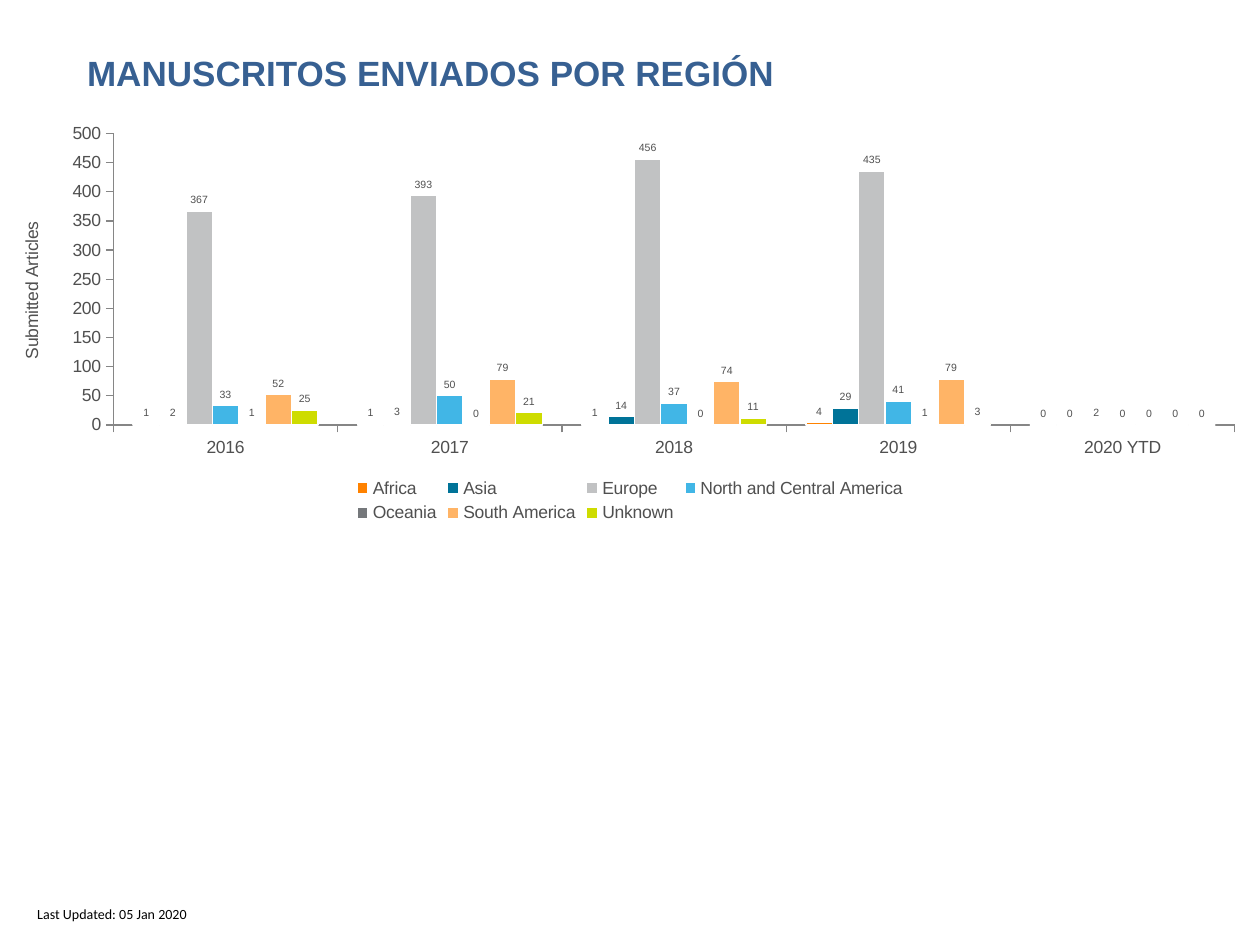
from pptx import Presentation
from pptx.chart.data import CategoryChartData
from pptx.dml.color import RGBColor
from pptx.enum.chart import (XL_CHART_TYPE as ChartType, XL_LABEL_POSITION as LabelPosition,
                             XL_LEGEND_POSITION as LegendPosition, XL_TICK_MARK as TickMark)
from pptx.enum.text import MSO_ANCHOR as Anchor, MSO_AUTO_SIZE as AutoSize, PP_ALIGN as Align
from pptx.oxml import parse_xml
from pptx.oxml.ns import nsdecls
from pptx.util import Cm, Pt

TITLE_BLUE = RGBColor(0x37, 0x60, 0x92)
TEXT_GREY = RGBColor(0x50, 0x50, 0x50)
AXIS_GREY = RGBColor(0x86, 0x86, 0x86)
BLACK = RGBColor(0, 0, 0)
WHITE = RGBColor(0xFF, 0xFF, 0xFF)

YEARS = ["2016", "2017", "2018", "2019", "2020 YTD"]
REGIONS = [
    ("Africa", (1, 1, 1, 4, 0), RGBColor(0xFF, 0x82, 0x00)),
    ("Asia", (2, 3, 14, 29, 0), RGBColor(0x00, 0x73, 0x98)),
    ("Europe", (367, 393, 456, 435, 2), RGBColor(0xC1, 0xC2, 0xC3)),
    ("North and Central America", (33, 50, 37, 41, 0), RGBColor(0x41, 0xB6, 0xE6)),
    ("Oceania", (1, 0, 0, 1, 0), RGBColor(0x75, 0x78, 0x7B)),
    ("South America", (52, 79, 74, 79, 0), RGBColor(0xFF, 0xB4, 0x66)),
    ("Unknown", (25, 21, 11, 3, 0), RGBColor(0xCE, 0xDC, 0x00)),
]
# Plot area as fractions of the chart frame
PLOT_AREA = {"x": 0.09, "y": 0.04, "w": 0.89, "h": 0.71}

TITLE_FONT = {"name": "Arial", "size": Pt(20), "bold": True, "color": TITLE_BLUE}
FOOTER_FONT = {"name": "Calibri", "size": Pt(8), "color": BLACK}
CHART_FONT = {"name": "Arial", "size": Pt(10), "bold": False, "color": TEXT_GREY}
LABEL_FONT = {**CHART_FONT, "size": Pt(6)}


def format_font(font, formats):
    for key, value in formats.items():
        if key == "color":
            font.color.rgb = value
        else:
            setattr(font, key, value)


def write_line(shape, text, formats, wrap):
    frame = shape.text_frame
    settings = {"auto_size": AutoSize.NONE, "word_wrap": wrap, "vertical_anchor": Anchor.TOP}
    for key, value in settings.items():
        setattr(frame, key, value)
    para = frame.paragraphs[0]
    para.alignment = Align.LEFT
    para.space_before = Pt(0)
    span = para.add_run()
    span.text = text
    format_font(span.font, formats)


def place_title(page, box):
    title = page.shapes.title
    for key, value in zip(("left", "top", "width", "height"), box):
        setattr(title, key, value)
    write_line(title, "MANUSCRITOS ENVIADOS POR REGIÓN", TITLE_FONT, True)


def place_footer(page, box):
    footer = page.shapes.add_textbox(*box)
    write_line(footer, "Last Updated: 05 Jan 2020", FOOTER_FONT, False)


def fix_plot_area(chart):
    sizes = "".join(f'<c:{key} val="{value}"/>' for key, value in PLOT_AREA.items())
    layout = parse_xml(
        f'<c:layout {nsdecls("c")}><c:manualLayout><c:layoutTarget val="inner"/>'
        f'<c:xMode val="edge"/><c:yMode val="edge"/>{sizes}</c:manualLayout></c:layout>')
    plot_area = chart._chartSpace.chart.plotArea
    for old in plot_area.findall(layout.tag):
        plot_area.remove(old)
    plot_area.insert(0, layout)


def format_axes(chart):
    for axis in (chart.category_axis, chart.value_axis):
        axis.has_major_gridlines = False
        axis.major_tick_mark = TickMark.OUTSIDE
        axis.minor_tick_mark = TickMark.NONE
        axis.format.line.color.rgb = AXIS_GREY
        axis.format.line.width = Pt(0.75)
        format_font(axis.tick_labels.font, CHART_FONT)
    scale = {"minimum_scale": 0, "maximum_scale": 500, "major_unit": 50}
    for key, value in scale.items():
        setattr(chart.value_axis, key, value)
    para = chart.value_axis.axis_title.text_frame.paragraphs[0]
    span = para.add_run()
    span.text = "Submitted Articles"
    format_font(span.font, CHART_FONT)


def format_series(plot):
    plot.gap_width = 150
    plot.overlap = 0
    plot.vary_by_categories = False
    for series, (_, _, color) in zip(plot.series, REGIONS):
        series.invert_if_negative = False
        series.format.fill.solid()
        series.format.fill.fore_color.rgb = color
        series.format.line.color.rgb = WHITE
        series.format.line.width = Pt(0.75)
        labels = series.data_labels
        labels.show_value = True
        labels.position = LabelPosition.OUTSIDE_END
        format_font(labels.font, LABEL_FONT)


def place_chart(page, box):
    data = CategoryChartData(number_format="General")
    data.categories = YEARS
    for name, values, _ in REGIONS:
        data.add_series(name, values)
    chart = page.shapes.add_chart(ChartType.COLUMN_CLUSTERED, *box, data).chart
    chart.has_title = False
    format_font(chart.font, CHART_FONT)
    format_axes(chart)
    format_series(chart.plots[0])
    fix_plot_area(chart)

    # Legend
    chart.has_legend = True
    chart.legend.position = LegendPosition.BOTTOM
    chart.legend.include_in_layout = False
    format_font(chart.legend.font, CHART_FONT)


def main():
    deck = Presentation()
    deck.slide_width, deck.slide_height = Cm(25.4), Cm(19.05)
    page = deck.slides.add_slide(deck.slide_layouts[5])
    place_chart(page, (Cm(0), Cm(2.36), deck.slide_width, Cm(8.28)))
    place_title(page, (Cm(1.5), Cm(0.92), Cm(20.7), Cm(0.79)))
    place_footer(page, (Cm(0.5), Cm(18.14), Cm(12.75), Cm(0.7)))
    deck.save("out.pptx")


if __name__ == "__main__":
    main()
